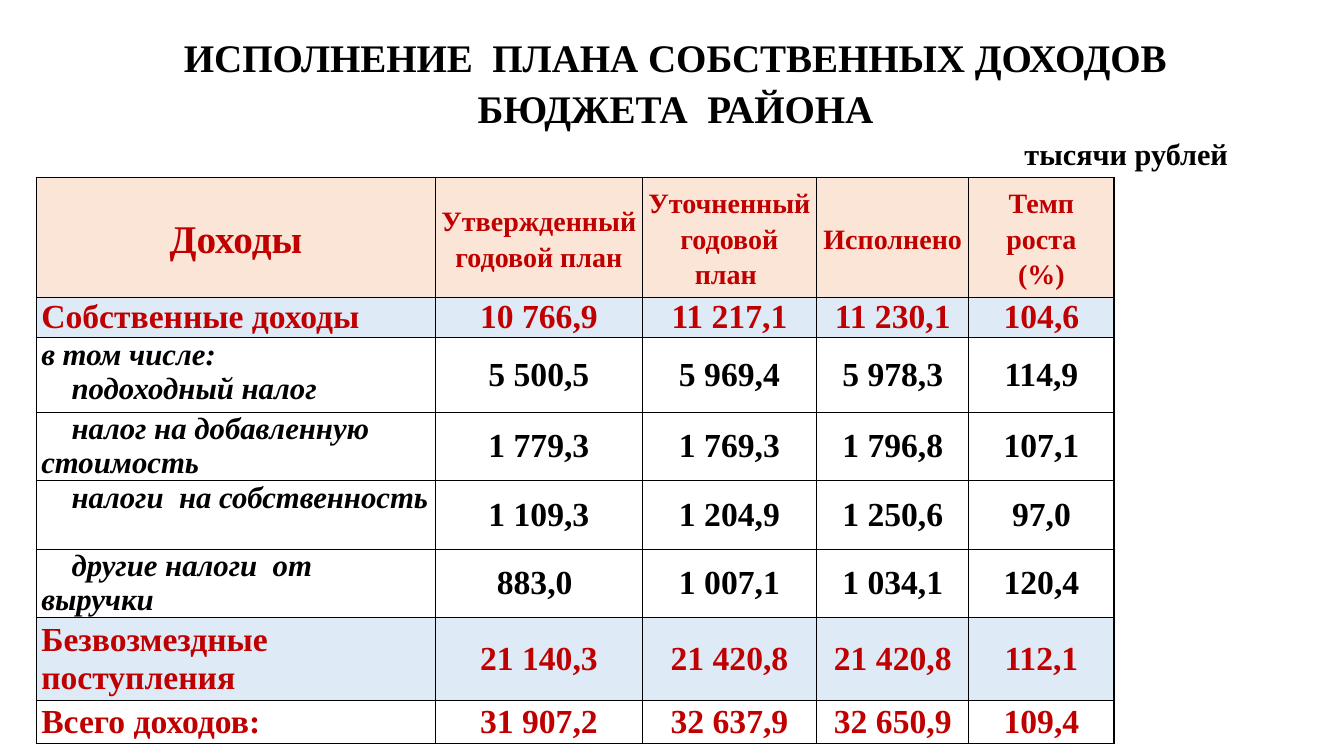
"""Builds the slide on the district budget's own revenue plan."""
from lxml.etree import SubElement
from pptx import Presentation
from pptx.dml.color import RGBColor
from pptx.enum.text import MSO_ANCHOR as Anchor, MSO_AUTO_SIZE as AutoSize, PP_ALIGN as Align
from pptx.oxml.ns import qn
from pptx.util import Inches, Pt

FONT = "Times New Roman"
BLACK, RED, WHITE = "000000", "C00000", "FFFFFF"
PEACH, BLUE = "FBE5D6", "DEEBF7"
COLUMN_WIDTHS = [3.96, 2.05, 1.73, 1.51, 1.44]
HEADER_HEIGHT = 1.19
HEADERS = [["Доходы"], ["Утвержденный годовой план"], ["Уточненный годовой план "],
           ["Исполнено"], ["Темп роста", "(%)"]]
TOTALS = {"Собственные доходы": BLUE, "Безвозмездные поступления": BLUE, "Всего доходов:": WHITE}
REVENUES = [
    (0.4, ["Собственные доходы"], ["10 766,9", "11 217,1", "11 230,1", "104,6"]),
    (0.74, ["в том числе:", "подоходный налог"], ["5 500,5", "5 969,4", "5 978,3", "114,9"]),
    (0.68, ["налог на добавленную стоимость"], ["1 779,3", "1 769,3", "1 796,8", "107,1"]),
    (0.68, ["налоги  на собственность"], ["1 109,3", "1 204,9", "1 250,6", "97,0"]),
    (0.68, ["другие налоги  от выручки"], ["883,0 ", "1 007,1", "1 034,1", "120,4"]),
    (0.82, ["Безвозмездные поступления"], ["21 140,3", "21 420,8", "21 420,8", "112,1"]),
    (0.43, ["Всего доходов:"], ["31 907,2", "32 637,9", "32 650,9", "109,4"]),
]


def rgb(color):
    """Turn a hex string into a colour."""
    return RGBColor.from_string(color)


def write_paragraph(paragraph, text, size, color, align, italic=False, spacing=1.0):
    """Write one bold run into a paragraph and format both."""
    paragraph.alignment = align
    paragraph.line_spacing = spacing
    run = paragraph.add_run()
    run.text = text
    font = run.font
    font.name, font.size, font.bold, font.italic = FONT, Pt(size), True, italic
    font.color.rgb = rgb(color)


def add_title(slide):
    """Fill the title placeholder with the heading and the unit line."""
    title = slide.shapes.title
    title.left, title.top = Inches(0.95), Inches(0.39)
    title.width, title.height = Inches(11.5), Inches(1.21)
    frame = title.text_frame
    frame.word_wrap = True
    frame.auto_size = AutoSize.NONE
    frame.vertical_anchor = Anchor.MIDDLE
    write_paragraph(frame.paragraphs[0], "ИСПОЛНЕНИЕ  ПЛАНА СОБСТВЕННЫХ ДОХОДОВ БЮДЖЕТА  РАЙОНА",
                    27.9, BLACK, Align.CENTER, spacing=1.09)
    unit = frame.add_paragraph()
    write_paragraph(unit, "тысячи рублей", 21.6, BLACK, Align.RIGHT, spacing=1.09)
    unit._p.get_or_add_pPr().set("marR", str(Inches(0.17)))


def style_cell(cell, fill, anchor=Anchor.MIDDLE):
    """Set the borders, fill, margins and anchor of a cell."""
    properties = cell._tc.get_or_add_tcPr()
    for side in ("a:lnL", "a:lnR", "a:lnT", "a:lnB"):
        line = SubElement(properties, qn(side), w=str(Pt(1)))
        SubElement(SubElement(line, qn("a:solidFill")), qn("a:srgbClr"), val=BLACK)
    cell.fill.solid()
    cell.fill.fore_color.rgb = rgb(fill)
    cell.margin_left = cell.margin_right = Inches(0.05)
    cell.margin_top = cell.margin_bottom = 0
    cell.vertical_anchor = anchor


def write_cell(cell, lines, size, color, align, italic=False, spacing=1.0):
    """Write each line as a paragraph of the cell and return the paragraphs."""
    frame = cell.text_frame
    for index, text in enumerate(lines):
        paragraph = frame.add_paragraph() if index else frame.paragraphs[0]
        write_paragraph(paragraph, text, size, color, align, italic, spacing)
    return frame.paragraphs


def fill_header(table):
    """Fill the header row."""
    for column, lines in enumerate(HEADERS):
        cell = table.cell(0, column)
        style_cell(cell, PEACH)
        write_cell(cell, lines, 20 if column else 28, RED, Align.CENTER, spacing=1.15)


def fill_revenue(table, row, label, values):
    """Fill one revenue row, with totals in red and single taxes indented."""
    is_total = label[0] in TOTALS
    fill = TOTALS.get(label[0], WHITE)
    color = RED if is_total else BLACK
    name = table.cell(row, 0)
    style_cell(name, fill, Anchor.MIDDLE if is_total else Anchor.TOP)
    paragraphs = write_cell(name, label, 24 if is_total else 22, color, Align.LEFT, not is_total)
    if not is_total:
        paragraphs[-1]._p.get_or_add_pPr().set("indent", str(Inches(0.3)))
    for column, value in enumerate(values, 1):
        cell = table.cell(row, column)
        style_cell(cell, fill)
        write_cell(cell, [value], 24, color, Align.CENTER)


def add_revenue_table(slide):
    """Add the table of revenues."""
    heights = [HEADER_HEIGHT] + [height for height, _, _ in REVENUES]
    table = slide.shapes.add_table(len(heights), len(COLUMN_WIDTHS), Inches(0.36), Inches(1.76),
                                   Inches(sum(COLUMN_WIDTHS)), Inches(sum(heights))).table
    for column, width in zip(table.columns, COLUMN_WIDTHS):
        column.width = Inches(width)
    for row, height in zip(table.rows, heights):
        row.height = Inches(height)
    fill_header(table)
    for row, (_, label, values) in enumerate(REVENUES, 1):
        fill_revenue(table, row, label, values)


def main():
    """Build and save the presentation."""
    presentation = Presentation()
    presentation.slide_width, presentation.slide_height = Inches(13.33), Inches(7.5)
    slide = presentation.slides.add_slide(presentation.slide_layouts[5])
    add_title(slide)
    add_revenue_table(slide)
    presentation.save("out.pptx")


if __name__ == "__main__":
    main()
